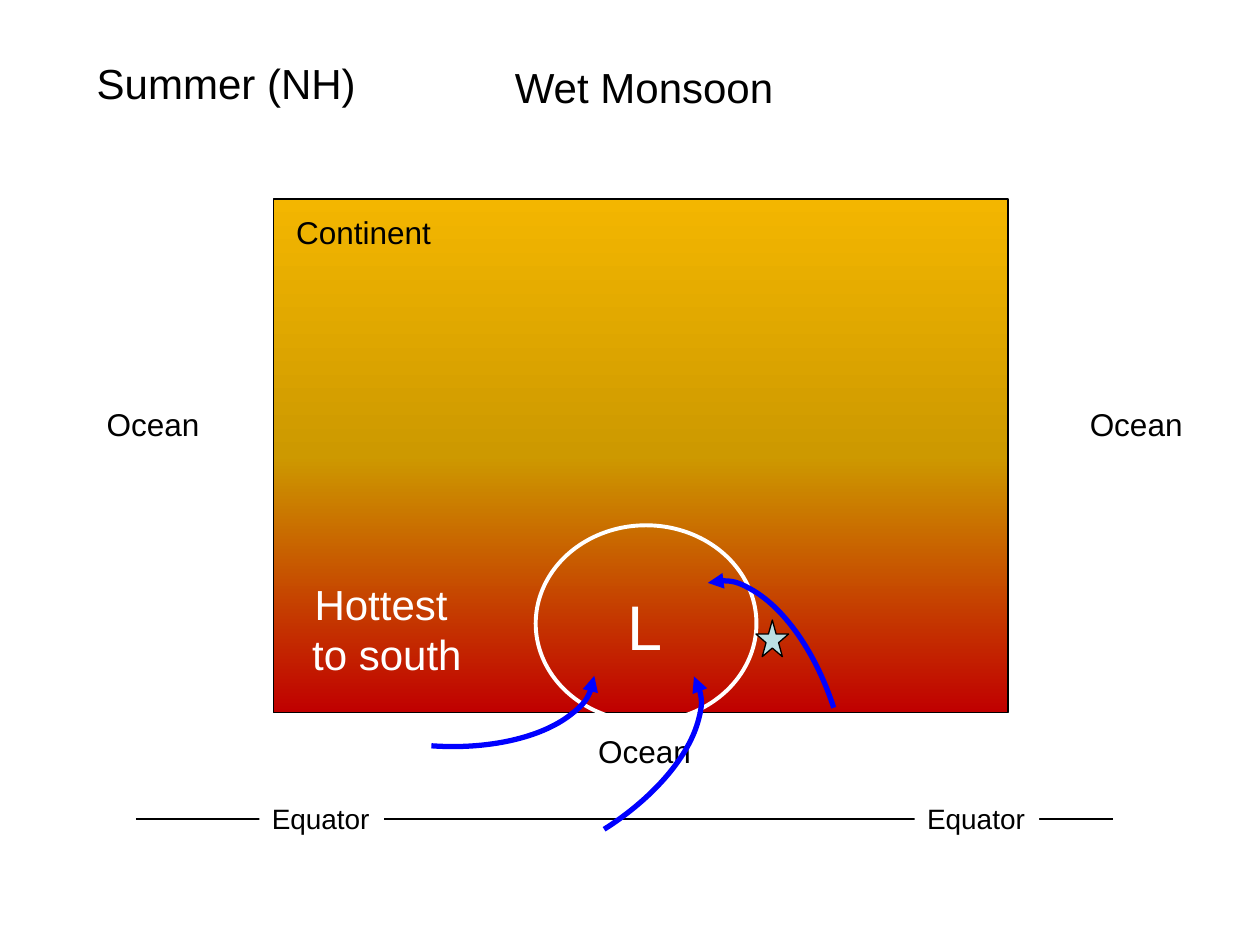
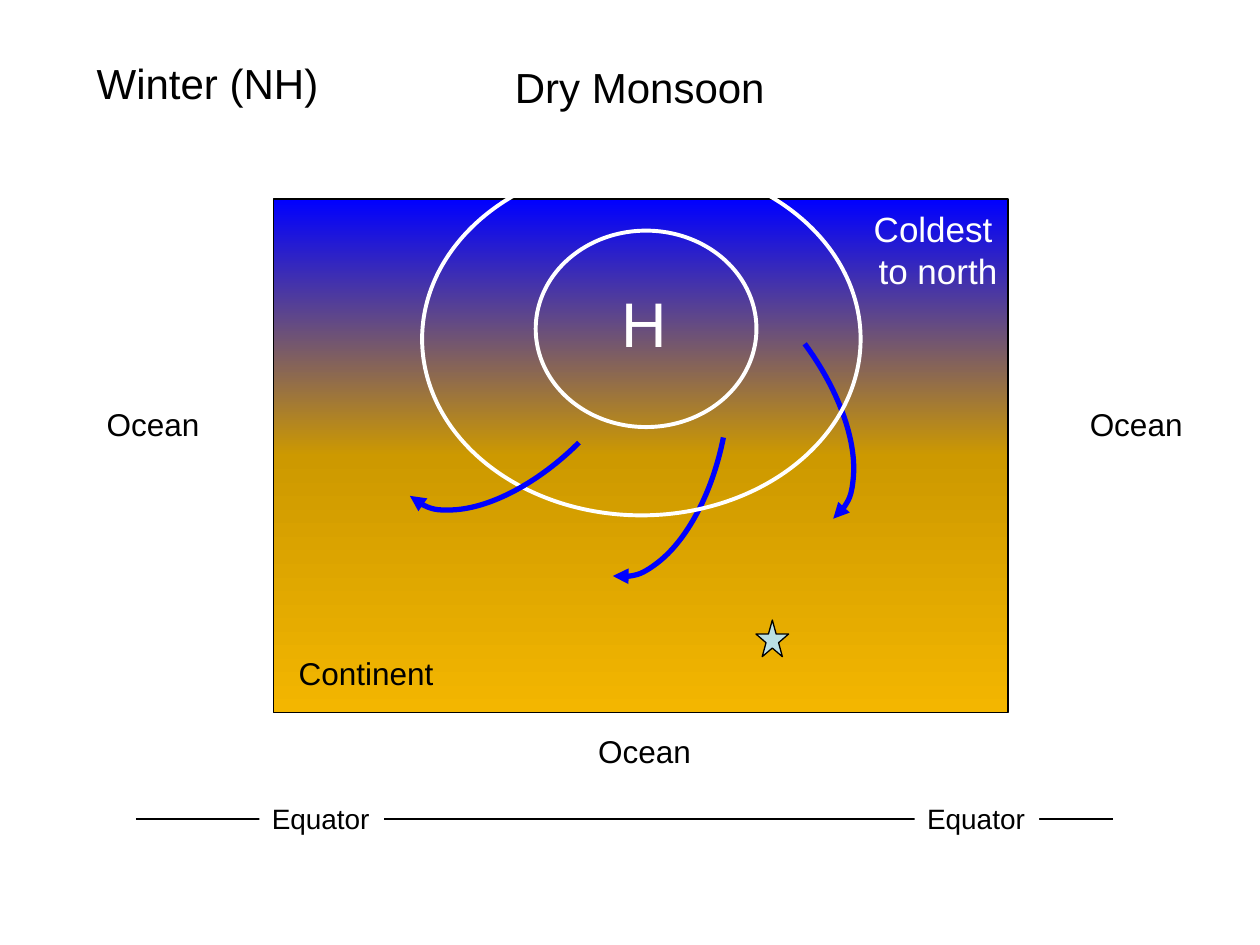
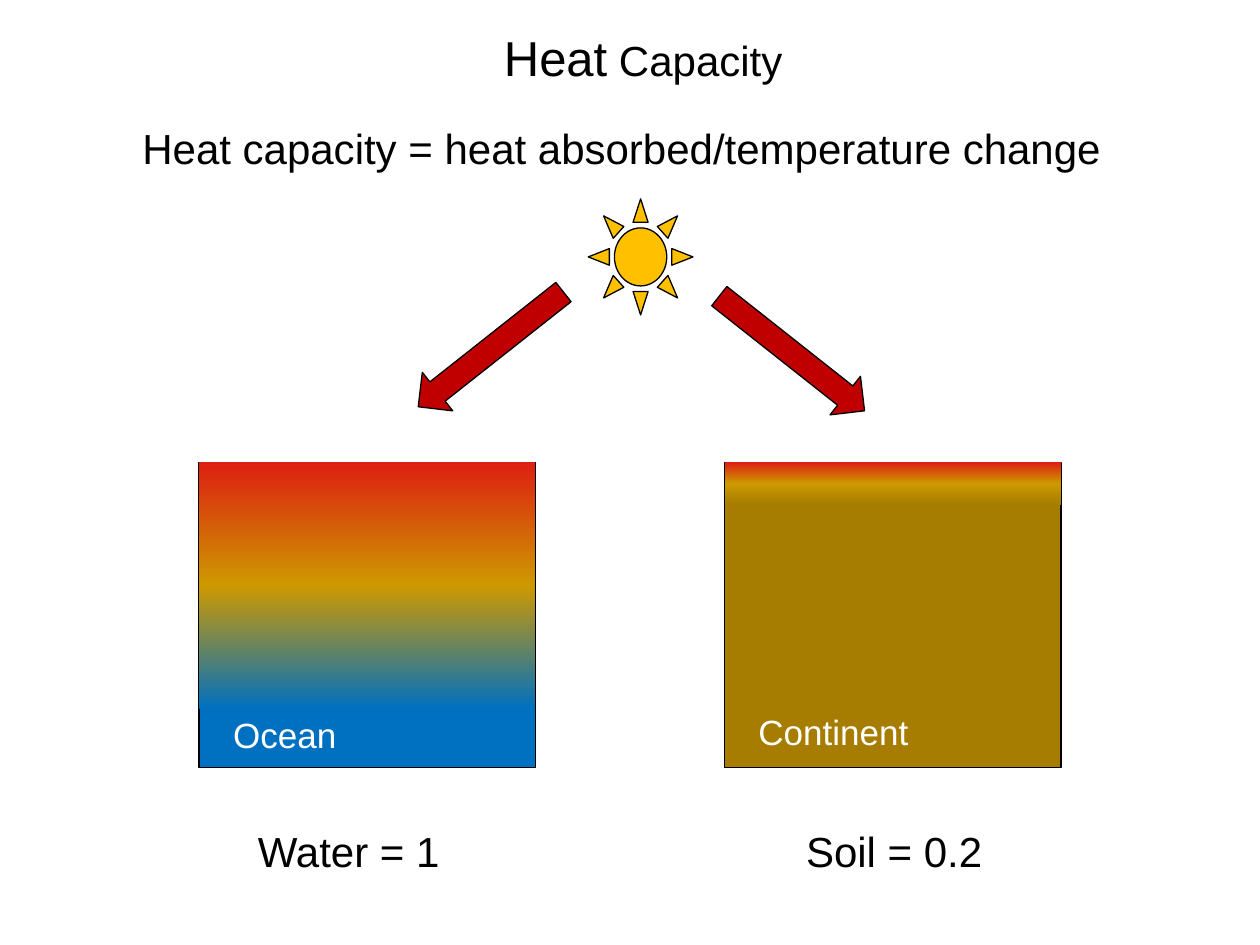
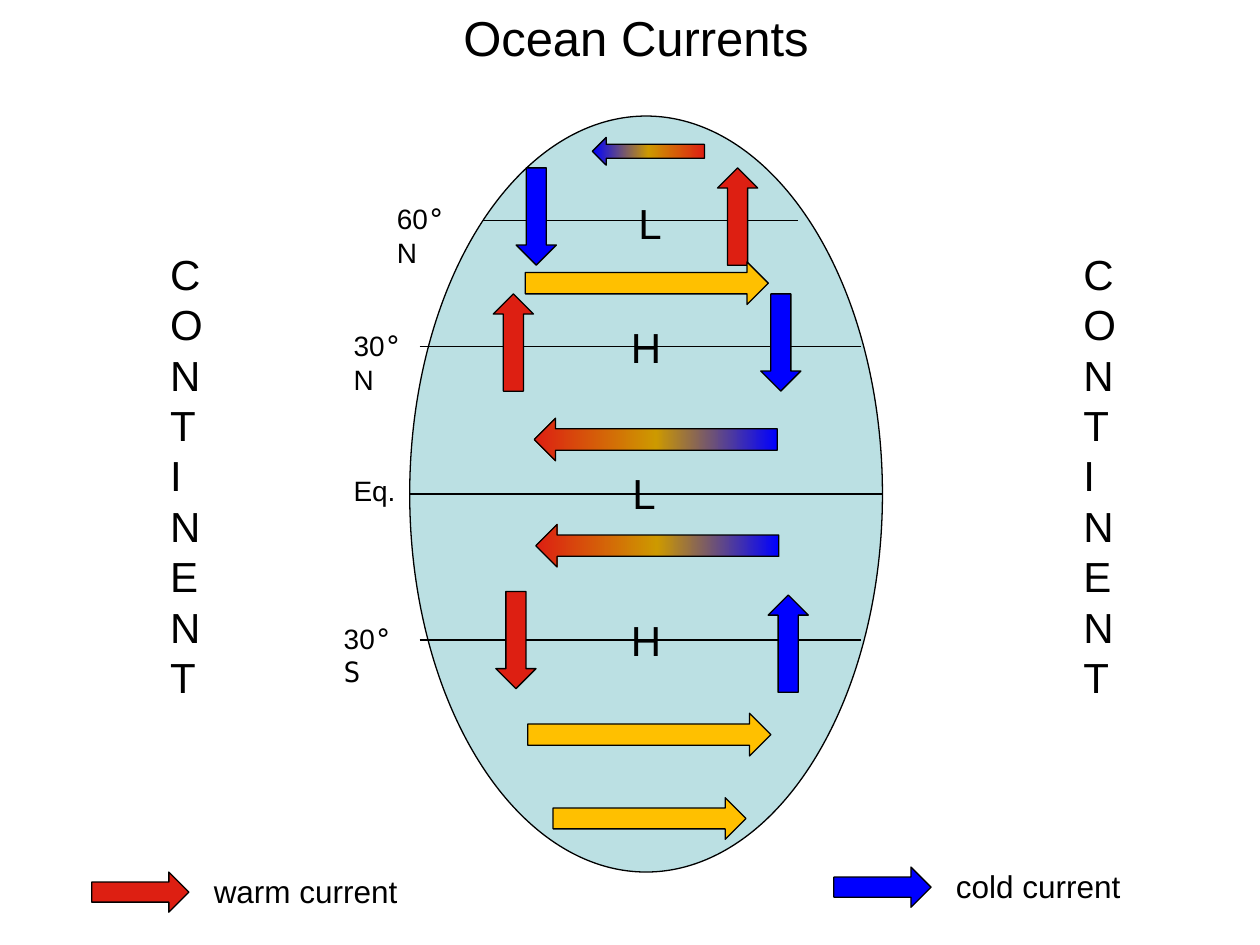
import copy

import pptx
import pptx.dml.color
import pptx.enum.shapes
import pptx.enum.text
import pptx.oxml.ns
import pptx.util

Cm = pptx.util.Cm
Pt = pptx.util.Pt
RGB = pptx.dml.color.RGBColor
KIND = pptx.enum.shapes.MSO_SHAPE
ALIGN = pptx.enum.text.PP_ALIGN
qn = pptx.oxml.ns.qn

BLACK = RGB(0x00, 0x00, 0x00)
WHITE = RGB(0xFF, 0xFF, 0xFF)
BLUE = RGB(0x00, 0x00, 0xFF)
SEA = RGB(0x00, 0x70, 0xC0)
PALE = RGB(0xBB, 0xE0, 0xE3)
RED = RGB(0xDD, 0x1F, 0x12)
DARK = RGB(0xC0, 0x00, 0x00)
OCHRE = RGB(0xCD, 0x99, 0x00)
AMBER = RGB(0xF3, 0xB6, 0x00)
GOLD = RGB(0xFF, 0xC0, 0x00)
SOIL = RGB(0xA6, 0x7D, 0x00)

FONT = "Arial"
MONO = "DejaVu Sans Mono"

# Lengths in the content are centimetres, angles are clockwise degrees.
# Monsoon maps
LAND = (5.51, 4.01, 14.81, 10.36)
STAR = (15.24, 12.5, 0.66, 0.74)
ARC = (6.35, 3.28)
OCEANS = [(1.9, 8.05), (11.81, 14.63), (21.72, 8.05)]
TAGS = [5.23, 18.44]
MAPS = [
    {
        "tones": [DARK, OCHRE, AMBER], "turn": 270,
        "season": ("Summer (NH)", 5.79), "name": ("Wet Monsoon", 5.77),
        "land": (5.72, 4.17), "cell": ("L", 12.4, 11.71, 1.22),
        "note": (["Hottest ", "to south"], 6.02, 11.53, 3.56, 24),
        "flip": True,
        "marks": [
            ("ring", 10.8, 10.59, 4.45, 3.96),
            ("arc", 5.64, 11.76, 4.1),
            ("arc", 8.13, 13.69, 327.8),
            ("arc", 12.07, 13.13, 252.1),
        ],
    },
    {
        "tones": [BLUE, OCHRE, AMBER], "turn": 90,
        "season": ("Winter (NH)", 5.03), "name": ("Dry Monsoon", 5.61),
        "land": (5.77, 13.06), "cell": ("H", 12.27, 5.61, 1.45),
        "note": (["Coldest ", "to north"], 17.35, 4.06, 3.12, 20),
        "flip": False,
        "marks": [
            ("ring", 10.8, 4.65, 4.45, 3.96),
            ("arc", 11.73, 6.27, 53.4),
            ("arc", 9.8, 6.86, 101.3),
            ("ring", 8.51, 3.28, 8.84, 7.11),
            ("arc", 7.34, 6.12, 135.2),
        ],
    },
]

# Heat capacity: left, base, band height, label, its place, value, its place
TANKS = [
    (4.01, SEA, 4.98, "Ocean", (4.45, 14.25, 2.62), "Water = 1", (4.95, 4.22)),
    (14.61, SOIL, 0.86, "Continent", (15.04, 14.2, 3.56), "Soil = 0.2", (16, 4.09)),
]
RAYS = [(9.4, 5.18, 51.7), (15.47, 5.26, 308.3)]

# Ocean currents
BASIN = (8.26, 2.34, 9.53, 15.24)
RULES = [(8.26, 17.78, 9.96), (8.46, 17.35, 6.99),
         (9.73, 16.08, 4.45), (8.46, 17.35, 12.9)]
DEGREES = [
    ([("Eq.", FONT)], 6.88, 9.42, 1.37),
    ([("30", FONT), ("°", MONO), ("N", FONT)], 6.88, 6.5, 1.78),
    ([("60", FONT), ("°", MONO), ("N", FONT)], 7.75, 3.94, 1.78),
    ([("30", FONT), ("°S", MONO)], 6.68, 12.4, 1.75),
]
COASTS = [3.18, 21.59]
CELLS = [("H", 12.47, 6.35), ("H", 12.47, 12.27),
         ("L", 12.62, 3.86), ("L", 12.5, 9.3)]
SHORT = (1.96, 0.81)
LONG = (4.9, 0.86)
BLEND = [BLUE, OCHRE, RED]
# left, top, size, fill, rotation, gradient angle
FLOWS = [
    (14.76, 6.5, SHORT, BLUE, 90, 0),
    (9.42, 12.5, SHORT, RED, 90, 0),
    (14.91, 12.57, SHORT, BLUE, 270, 0),
    (9.37, 6.5, SHORT, RED, 270, 0),
    (13.89, 3.96, SHORT, RED, 270, 0),
    (9.83, 3.96, SHORT, BLUE, 90, 0),
    (10.77, 8.43, LONG, BLEND, 180, 0),
    (10.8, 10.57, LONG, BLEND, 180, 0),
    (10.59, 5.28, LONG, GOLD, 0, 0),
    (10.64, 14.38, LONG, GOLD, 0, 0),
    (11.94, 2.77, (2.26, 0.56), BLEND, 180, 180),
    (11.15, 16.08, (3.89, 0.84), GOLD, 0, 0),
]
KEYS = [("warm current", RED, 1.85, 17.58, 4.24),
        ("cold current", BLUE, 16.81, 17.48, 3.86)]


def blend(shape, tones, turn):
    """Fill with evenly spaced stops; turn is clockwise."""
    shape.fill.gradient()
    stops = shape._element.spPr.find(".//" + qn("a:gsLst"))
    while len(stops) < len(tones):
        stops.append(copy.deepcopy(stops[0]))
    for i, (stop, tone) in enumerate(zip(shape.fill.gradient_stops, tones)):
        stop.color.rgb = tone
        stop.position = i / (len(tones) - 1)
    shape.fill.gradient_angle = -turn % 360


def draw(slide, kind, box, fill=None, line=BLACK, width=0.75, spin=0, turn=0):
    """Add a preset shape; a list as fill makes a gradient."""
    shape = slide.shapes.add_shape(kind, *map(Cm, box))
    shape.shadow.inherit = False
    shape.rotation = spin
    if fill is None:
        shape.fill.background()
    elif isinstance(fill, list):
        blend(shape, fill, turn)
    else:
        shape.fill.solid()
        shape.fill.fore_color.rgb = fill
    if line is None:
        shape.line.fill.background()
    else:
        shape.line.color.rgb = line
        shape.line.width = Pt(width)
    return shape


def sweep(slide, left, top, spin, flip):
    """Add a curved wind arrow."""
    arc = draw(slide, KIND.ARC, (left, top, *ARC), line=BLUE, width=3, spin=spin)
    props = arc._element.spPr
    if flip:
        props.find(qn("a:xfrm")).set("flipV", "1")
    ln = props.find(qn("a:ln"))
    ln.append(ln.makeelement(qn("a:tailEnd"), {"type": "triangle"}))


def rule(slide, start, end, top):
    """Add a thin level line."""
    line = slide.shapes.add_connector(
        pptx.enum.shapes.MSO_CONNECTOR.STRAIGHT,
        Cm(start), Cm(top), Cm(end), Cm(top))
    line.line.color.rgb = BLACK
    line.line.width = Pt(0.75)
    props = line._element.spPr
    props.append(props.makeelement(qn("a:effectLst"), {}))


def write(slide, paras, left, top, width, size, tone=BLACK,
          fill=None, wrap=False, align=None, rows=None):
    """Add a text box; paras is a string or a list of lists of (text, font, size)."""
    if isinstance(paras, str):
        paras = [[(paras, FONT, size)]]
    tall = (rows or len(paras)) * size * 1.2 / 72 * 2.54 + 0.25
    box = slide.shapes.add_textbox(Cm(left), Cm(top), Cm(width), Cm(tall))
    if fill is not None:
        box.fill.solid()
        box.fill.fore_color.rgb = fill
    frame = box.text_frame
    frame.word_wrap = wrap
    frame.auto_size = pptx.enum.text.MSO_AUTO_SIZE.SHAPE_TO_FIT_TEXT
    for i, runs in enumerate(paras):
        para = frame.add_paragraph() if i else frame.paragraphs[0]
        para.alignment = align
        for text, font, points in runs:
            run = para.add_run()
            run.text = text
            run.font.name = font
            run.font.size = Pt(points)
            run.font.color.rgb = tone


def monsoon(slide, data):
    draw(slide, KIND.RECTANGLE, LAND, data["tones"], turn=data["turn"])
    rule(slide, 2.74, 22.43, 16.51)
    for left in TAGS:
        write(slide, "Equator", left, 16.03, 2.51, 16, fill=WHITE)
    for left, top in OCEANS:
        write(slide, "Ocean", left, top, 2.41, 18)
    season, width = data["season"]
    write(slide, season, 1.7, 1.04, width, 24)
    name, width = data["name"]
    write(slide, name, 10.13, 1.12, width, 24)
    write(slide, "Continent", *data["land"], 3.25, 18)
    write(slide, *data["cell"], 36, WHITE)
    for kind, left, top, *rest in data["marks"]:
        if kind == "ring":
            draw(slide, KIND.OVAL, (left, top, *rest), line=WHITE, width=2.25)
        else:
            sweep(slide, left, top, rest[0], data["flip"])
    lines, left, top, width, size = data["note"]
    write(slide, [[(line, FONT, size)] for line in lines], left, top, width,
          size, WHITE, align=ALIGN.CENTER)
    draw(slide, KIND.STAR_5_POINT, STAR, PALE)


def heat(slide):
    write(slide, [[("Heat", FONT, 28), (" Capacity", FONT, 24)]],
          9.91, 0.43, 6.2, 28)
    write(slide, "Heat capacity = heat absorbed/temperature change",
          2.62, 2.34, 20.04, 24)
    draw(slide, KIND.SUN, (11.86, 4.01, 2.11, 2.34), GOLD)
    for left, top, spin in RAYS:
        draw(slide, KIND.DOWN_ARROW, (left, top, 0.99, 3.73), DARK, spin=spin)
    for left, base, band, label, place, value, (start, width) in TANKS:
        draw(slide, KIND.RECTANGLE, (left, 9.32, 6.78, 6.15), base)
        draw(slide, KIND.RECTANGLE, (left, 9.32, 6.78, band),
             [RED, OCHRE, base], line=None, turn=90)
        write(slide, label, *place, 20, WHITE)
        write(slide, value, start, 16.51, width, 24)


def currents(slide):
    write(slide, "Ocean Currents", 9.09, 0.03, 7.57, 28, fill=WHITE)
    draw(slide, KIND.OVAL, BASIN, PALE)
    for ends in RULES:
        rule(slide, *ends)
    for parts, left, top, width in DEGREES:
        runs = [(text, font, 16) for text, font in parts]
        write(slide, [runs], left, top, width, 16)
    for left in COASTS:
        write(slide, "CONTINENT", left, 4.88, 0.64, 24, wrap=True, rows=9)
    for text, left, top in CELLS:
        write(slide, text, left, top, 1.27, 24, wrap=True)
    for left, top, size, fill, spin, turn in FLOWS:
        draw(slide, KIND.RIGHT_ARROW, (left, top, *size), fill,
             spin=spin, turn=turn)
    for text, tone, left, top, width in KEYS:
        draw(slide, KIND.RIGHT_ARROW, (left, top, *SHORT), tone)
        write(slide, text, left + 2.21, top - 0.13, width, 18)


def main():
    deck = pptx.Presentation()
    deck.slide_width, deck.slide_height = Cm(25.4), Cm(19.05)
    blank = deck.slide_layouts[6]
    for data in MAPS:
        monsoon(deck.slides.add_slide(blank), data)
    heat(deck.slides.add_slide(blank))
    currents(deck.slides.add_slide(blank))
    deck.save("out.pptx")


if __name__ == "__main__":
    main()
